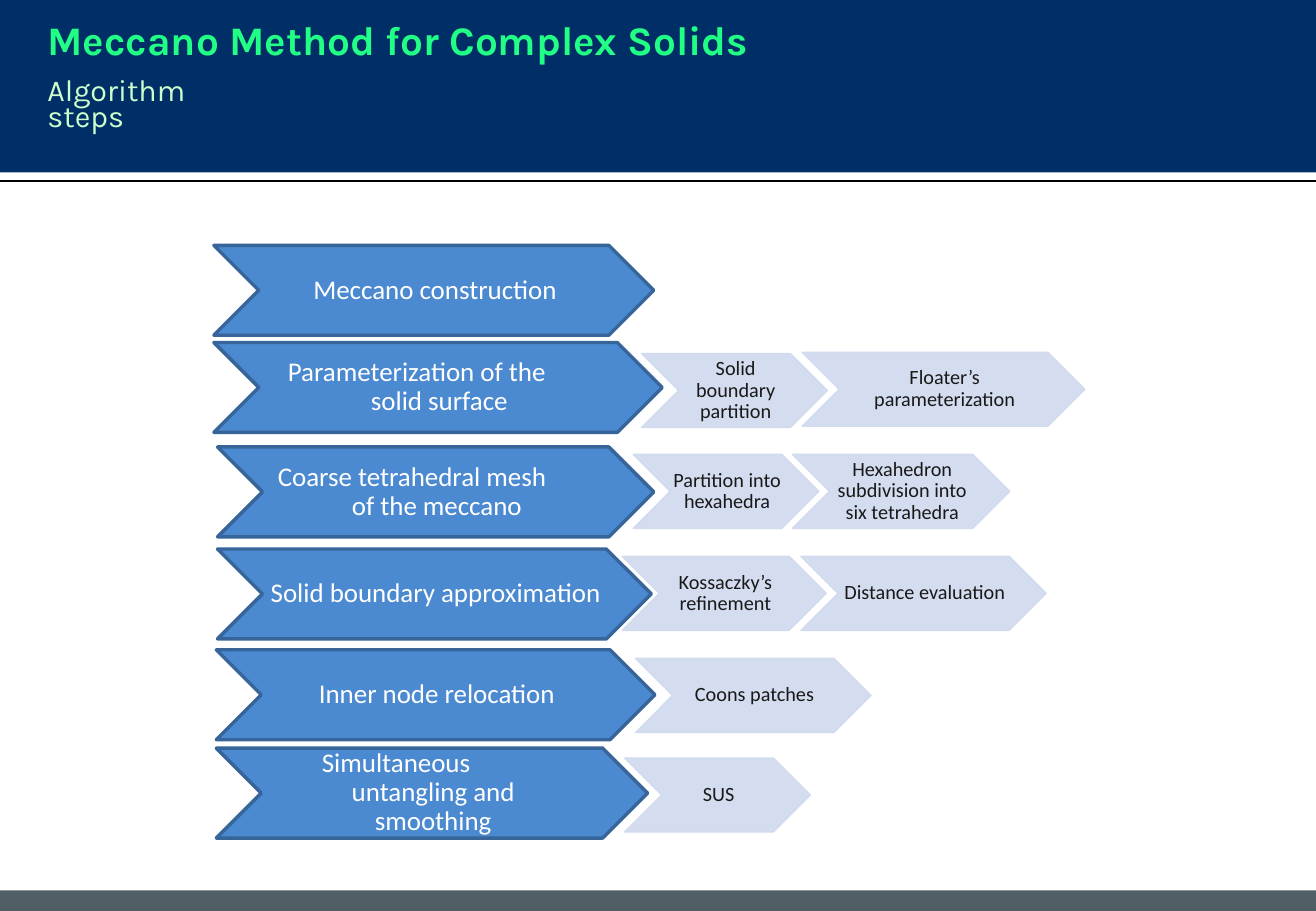
import pptx
import pptx.util
import pptx.dml.color
import pptx.enum.dml
import pptx.enum.shapes
import pptx.enum.text
import pptx.oxml
import pptx.oxml.ns

Inches = pptx.util.Inches
Pt = pptx.util.Pt
RGBColor = pptx.dml.color.RGBColor
Shape = pptx.enum.shapes.MSO_SHAPE
Align = pptx.enum.text.PP_ALIGN
Anchor = pptx.enum.text.MSO_ANCHOR

NAVY = RGBColor(0x00, 0x2E, 0x67)
SLATE = RGBColor(0x52, 0x5E, 0x66)
BLUE = RGBColor(0x4B, 0x89, 0xD0)
DARK_BLUE = RGBColor(0x37, 0x65, 0x9A)
PALE_BLUE = RGBColor(0xD0, 0xDA, 0xEE)
GREEN = RGBColor(0x21, 0xFF, 0x85)
PALE_GREEN = RGBColor(0xCC, 0xFF, 0xCC)
WHITE = RGBColor(0xFF, 0xFF, 0xFF)
BLACK = RGBColor(0x00, 0x00, 0x00)
INK = RGBColor(0x19, 0x19, 0x19)

SLIDE_WIDTH, SLIDE_HEIGHT = 10.83, 7.5
STEP_HEIGHT, DETAIL_HEIGHT = 0.74, 0.61

# left, top, width, text, first-line shift; then details as left, top, width, text
STEPS = [
    ((1.76, 2.02, 3.62, "Meccano construction", 0), []),
    ((1.76, 2.82, 3.69, "Parameterization of the\vsolid surface", 0.37),
     [(5.28, 2.91, 1.53, "Solid boundary partition"),
      (6.6, 2.9, 2.33, "Floater’s parameterization")]),
    ((1.79, 3.68, 3.59, "Coarse tetrahedral mesh\vof the meccano", 0.41),
     [(5.21, 3.74, 1.53, "Partition into hexahedra"),
      (6.52, 3.74, 1.79, "Hexahedron subdivision into six tetrahedra")]),
    ((1.79, 4.52, 3.57, "Solid boundary approximation", 0),
     [(5.12, 4.58, 1.68, "Kossaczky’s refinement"),
      (6.59, 4.58, 2.02, "Distance evaluation")]),
    ((1.78, 5.35, 3.61, "Inner node relocation", 0),
     [(5.23, 5.42, 1.94, "Coons patches")]),
    ((1.78, 6.16, 3.55, "Simultaneous\vuntangling and smoothing", 0.61),
     [(5.14, 6.24, 1.53, "SUS")]),
]


def add_run(paragraph, text, font_name, size, color, bold=False):
    """Add the text to the paragraph, with a line break at each vertical tab."""
    for index, line in enumerate(text.split("\v")):
        if index:
            paragraph.add_line_break()
        run = paragraph.add_run()
        run.text = line
        run.font.name = font_name
        run.font.size = Pt(size)
        run.font.bold = bold
        run.font.color.rgb = color


def add_band(slide, left, top, width, height, color):
    """Place a plain band behind everything else."""
    band = slide.shapes.add_shape(
        Shape.RECTANGLE, Inches(left), Inches(top), Inches(width), Inches(height))
    band.shadow.inherit = False
    band.fill.solid()
    band.fill.fore_color.rgb = color
    band.line.fill.background()
    slide.shapes._spTree.insert(2, band._element)


def fill_heading(placeholder, left, top, width, height, text, size, color, bold, spacing):
    """Move a heading placeholder into its box and write its text."""
    placeholder.left, placeholder.top = Inches(left), Inches(top)
    placeholder.width, placeholder.height = Inches(width), Inches(height)
    frame = placeholder.text_frame
    frame.word_wrap = True
    frame.auto_size = pptx.enum.text.MSO_AUTO_SIZE.NONE
    frame.vertical_anchor = Anchor.TOP
    paragraph = frame.paragraphs[0]
    properties = paragraph._p.get_or_add_pPr()
    properties.set("marL", "0")
    properties.set("indent", "0")
    pptx.oxml.ns.qn("a:buNone")
    properties.append(pptx.oxml.parse_xml(
        "<a:buNone %s/>" % pptx.oxml.ns.nsdecls("a")))
    paragraph.alignment = Align.LEFT
    paragraph.line_spacing = spacing
    paragraph.space_before = Pt(0)
    add_run(paragraph, text, "Karla", size, color, bold)


def add_header(slide, left, top, width, height):
    """Draw the header band, the rule under it, the title and the subtitle."""
    add_band(slide, left, top, width, height, NAVY)
    rule_top = Inches(top + height + 0.07)
    rule = slide.shapes.add_connector(
        pptx.enum.shapes.MSO_CONNECTOR.STRAIGHT,
        Inches(left), rule_top, Inches(left + width), rule_top)
    rule.line.color.rgb = BLACK
    rule.line.width = Pt(0.75)
    rule._element.spPr.append(pptx.oxml.parse_xml(
        "<a:effectLst %s/>" % pptx.oxml.ns.nsdecls("a")))
    title, subtitle = slide.placeholders
    fill_heading(title, left + 0.29, top + 0.07, 8.51, 0.63,
                 "Meccano Method for Complex Solids", 24, GREEN, True, 1.0)
    fill_heading(subtitle, left + 0.29, top + 0.62, 1.9, 0.53,
                 "Algorithm steps", 18, PALE_GREEN, False, 0.7)


def set_opacity(fill, percent):
    """Make a solid fill partly transparent."""
    color = fill._xPr.find(pptx.oxml.ns.qn("a:solidFill"))[0]
    color.append(pptx.oxml.parse_xml('<a:alpha %s val="%d"/>' % (
        pptx.oxml.ns.nsdecls("a"), percent * 1000)))


def add_chevron(slide, left, top, width, height, text, size, ink, fill, edge, edge_width, shift=0):
    """Draw a chevron with centred text, its first line shifted to the left."""
    chevron = slide.shapes.add_shape(
        Shape.CHEVRON, Inches(left), Inches(top), Inches(width), Inches(height))
    chevron.shadow.inherit = False
    chevron.fill.solid()
    chevron.fill.fore_color.rgb = fill
    chevron.line.color.rgb = edge
    chevron.line.width = Pt(edge_width)
    frame = chevron.text_frame
    frame.word_wrap = True
    frame.vertical_anchor = Anchor.MIDDLE
    frame.margin_left, frame.margin_right = Inches(0.02), Inches(shift)
    frame.margin_top = frame.margin_bottom = Inches(0.01)
    paragraph = frame.paragraphs[0]
    if shift:
        properties = paragraph._p.get_or_add_pPr()
        properties.set("marL", str(Inches(shift)))
        properties.set("indent", str(-Inches(shift)))
    paragraph.alignment = Align.CENTER
    paragraph.line_spacing = 0.9
    add_run(paragraph, text, "Calibri", size, ink)
    return chevron


def add_step(slide, step, details):
    """Draw one step of the algorithm followed by its details."""
    left, top, width, text, shift = step
    add_chevron(slide, left, top, width, STEP_HEIGHT, text, 16, WHITE,
                BLUE, DARK_BLUE, 2, shift)
    for left, top, width, text in details:
        detail = add_chevron(slide, left, top, width, DETAIL_HEIGHT, text, 12, INK,
                             PALE_BLUE, PALE_BLUE, 0.75)
        set_opacity(detail.fill, 90)
        set_opacity(detail.line.fill, 90)


def main():
    """Build the slide and save it."""
    presentation = pptx.Presentation()
    presentation.slide_width = Inches(SLIDE_WIDTH)
    presentation.slide_height = Inches(SLIDE_HEIGHT)
    slide = presentation.slides.add_slide(presentation.slide_layouts[1])
    add_header(slide, 0, 0, SLIDE_WIDTH, 1.42)
    add_band(slide, 0, SLIDE_HEIGHT - 0.17, SLIDE_WIDTH, 0.17, SLATE)
    for step, details in STEPS:
        add_step(slide, step, details)
    presentation.save("out.pptx")


if __name__ == "__main__":
    main()
